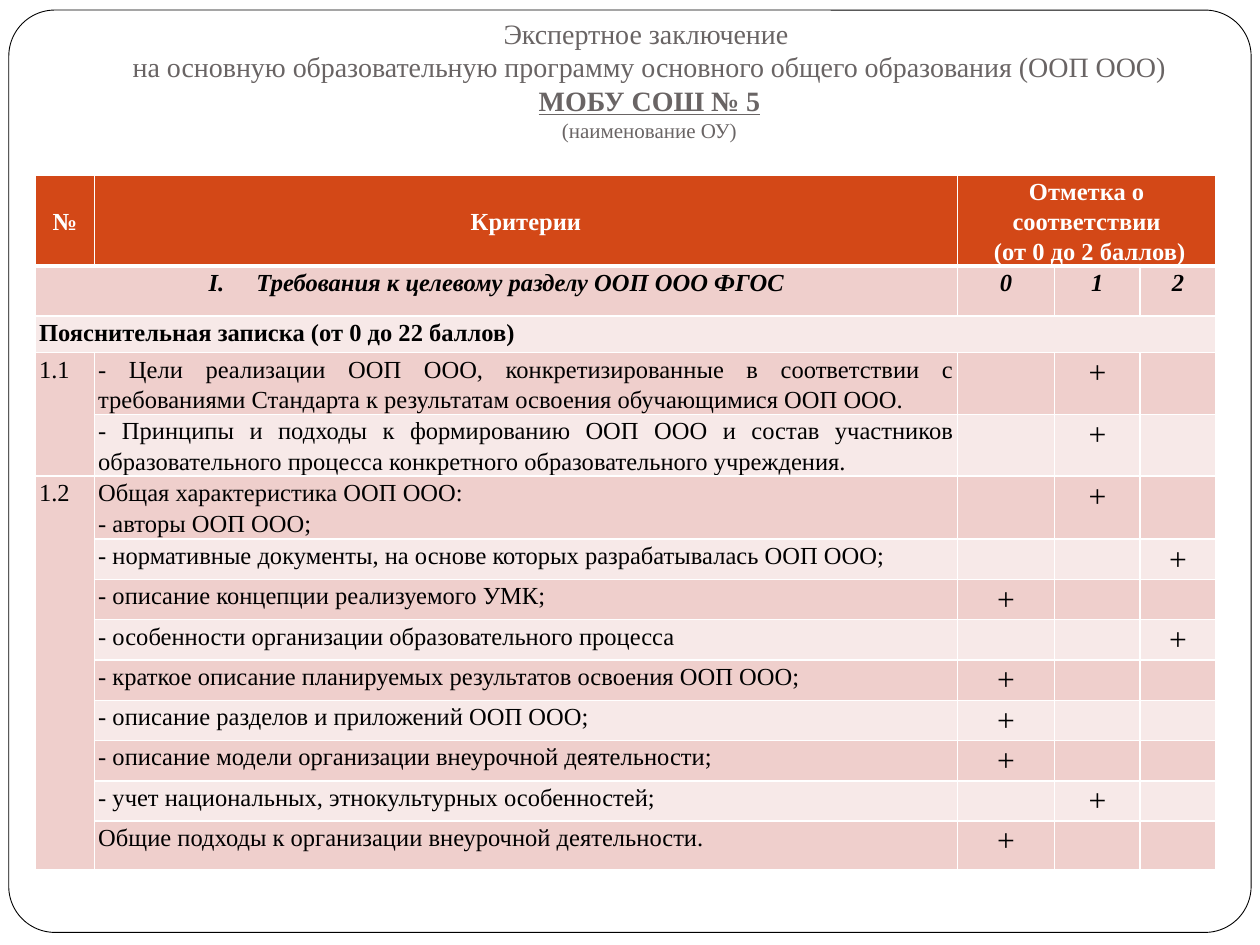
import pptx
import pptx.util
import pptx.dml.color
import pptx.enum.shapes
import pptx.enum.text
import pptx.oxml
import pptx.oxml.ns

Inches = pptx.util.Inches
Pt = pptx.util.Pt
RGBColor = pptx.dml.color.RGBColor
ALIGN = pptx.enum.text.PP_ALIGN
ANCHOR = pptx.enum.text.MSO_ANCHOR

WHITE = RGBColor(0xFF, 0xFF, 0xFF)
BLACK = RGBColor(0, 0, 0)
GRAY = RGBColor(0x69, 0x64, 0x64)
ORANGE = RGBColor(0xD3, 0x48, 0x17)
PINK = RGBColor(0xEF, 0xCF, 0xCC)
PALE = RGBColor(0xF7, 0xE9, 0xE8)

COLUMN_WIDTHS = [0.47, 6.85, 0.77, 0.68, 0.6]
ROW_HEIGHTS = [0.72, 0.4, 0.29, 0.49, 0.49, 0.5] + [0.32] * 7 + [0.39]
FIRST_CRITERION_ROW = 3
# Each criterion with the mark (0, 1 or 2) it received
CRITERIA = [
    ("- Цели реализации ООП ООО, конкретизированные в соответствии с требованиями "
     "Стандарта к результатам освоения обучающимися ООП ООО.", 1),
    ("- Принципы и подходы к формированию ООП ООО и состав участников "
     "образовательного процесса конкретного образовательного учреждения.", 1),
    ("Общая характеристика ООП ООО: \n- авторы ООП ООО;", 1),
    ("- нормативные документы, на основе которых разрабатывалась ООП ООО;", 2),
    ("- описание концепции реализуемого УМК;", 0),
    ("- особенности организации образовательного процесса", 2),
    ("- краткое описание планируемых результатов освоения ООП ООО;", 0),
    ("- описание разделов и приложений ООП ООО;", 0),
    ("- описание модели организации внеурочной деятельности;", 0),
    ("- учет национальных, этнокультурных особенностей;", 1),
    ("Общие подходы к организации внеурочной деятельности.", 0),
]


def add_text(paragraph, text, size=14, color=BLACK, bold=False, italic=False,
             underline=False):
    run = paragraph.add_run()
    run.text = text
    font = run.font
    font.name = "Times New Roman"
    font.size = Pt(size)
    font.color.rgb = color
    font.bold, font.italic, font.underline = bold, italic, underline


def set_borders(cell, bottom):
    """Give the cell white borders, 1 pt wide except for the bottom one."""
    properties = cell._tc.get_or_add_tcPr()
    widths = {"lnL": 1, "lnR": 1, "lnT": 1, "lnB": bottom}
    for position, (side, width) in enumerate(widths.items()):
        properties.insert(position, pptx.oxml.parse_xml(
            f'<a:{side} {pptx.oxml.ns.nsdecls("a")} w="{Pt(width)}"><a:solidFill>'
            f'<a:srgbClr val="{WHITE}"/></a:solidFill></a:{side}>'))


def number_roman(paragraph):
    """Number the paragraph I., II., ... with a hanging indent."""
    properties = paragraph._p.get_or_add_pPr()
    properties.set("marL", str(Inches(0.38)))
    properties.set("indent", str(Inches(-0.38)))
    properties.append(pptx.oxml.parse_xml(
        f'<a:buAutoNum {pptx.oxml.ns.nsdecls("a")} type="romanUcPeriod"/>'))


class SlideBuilder:
    def __init__(self, presentation):
        self.slide = presentation.slides.add_slide(presentation.slide_layouts[6])

    def frame(self, left, top, width, height):
        border = self.slide.shapes.add_shape(
            pptx.enum.shapes.MSO_SHAPE.ROUNDED_RECTANGLE,
            Inches(left), Inches(top), Inches(width), Inches(height))
        border.adjustments[0] = 0.05
        border.shadow.inherit = False
        border.fill.solid()
        border.fill.fore_color.rgb = WHITE
        border.line.color.rgb = BLACK
        border.line.width = Pt(0.5)

    def title(self, left, top, width, height, lines):
        box = self.slide.shapes.add_textbox(
            Inches(left), Inches(top), Inches(width), Inches(height))
        frame = box.text_frame
        frame.word_wrap = True
        frame.vertical_anchor = ANCHOR.BOTTOM
        frame.margin_bottom = Inches(0.1)
        paragraph = frame.paragraphs[0]
        paragraph.alignment = ALIGN.CENTER
        for index, (text, style) in enumerate(lines):
            if index:
                paragraph.add_line_break()
            add_text(paragraph, text, color=GRAY, **style)

    def table(self, left, top, widths, heights):
        """Add an empty table with an orange header and banded rows."""
        table = self.slide.shapes.add_table(
            len(heights), len(widths), Inches(left), Inches(top),
            Inches(sum(widths)), Inches(sum(heights))).table
        for column, width in zip(table.columns, widths):
            column.width = Inches(width)
        for index, (row, height) in enumerate(zip(table.rows, heights)):
            row.height = Inches(height)
            for cell in row.cells:
                cell.margin_left = cell.margin_right = Inches(0.03)
                cell.margin_top = cell.margin_bottom = 0
                cell.fill.solid()
                cell.fill.fore_color.rgb = (
                    ORANGE if index == 0 else PINK if index % 2 else PALE)
                set_borders(cell, bottom=1 if index else 3)
        return table

    def cell(self, cell, text, align=ALIGN.CENTER, anchor=ANCHOR.TOP,
             line_height=17.5, **style):
        cell.vertical_anchor = anchor
        for index, line in enumerate(text.split("\n")):
            frame = cell.text_frame
            paragraph = frame.add_paragraph() if index else frame.paragraphs[0]
            paragraph.alignment = align
            paragraph.line_spacing = Pt(line_height)
            add_text(paragraph, line, **style)


def fill_assessment(builder, table):
    merges = [((0, 2), (0, 4)), ((1, 0), (1, 1)), ((2, 0), (2, 4)),
              ((3, 0), (4, 0)), ((5, 0), (13, 0))]
    for first, last in merges:
        table.cell(*first).merge(table.cell(*last))

    headings = ["№", "Критерии", "Отметка о соответствии\n (от 0 до 2 баллов)"]
    for column, heading in enumerate(headings):
        builder.cell(table.cell(0, column), heading, anchor=ANCHOR.MIDDLE,
                     line_height=17.2, color=WHITE, bold=True)

    section = table.cell(1, 0)
    builder.cell(section, "Требования к целевому разделу ООП ООО ФГОС",
                 bold=True, italic=True)
    number_roman(section.text_frame.paragraphs[0])
    for mark in range(3):
        builder.cell(table.cell(1, 2 + mark), str(mark), bold=True, italic=True)

    builder.cell(table.cell(2, 0), "Пояснительная записка (от 0 до 22 баллов)",
                 align=ALIGN.LEFT, bold=True)
    for row, number in ((3, "1.1"), (5, "1.2")):
        builder.cell(table.cell(row, 0), number, align=ALIGN.LEFT)
    for row, (criterion, mark) in enumerate(CRITERIA, FIRST_CRITERION_ROW):
        builder.cell(table.cell(row, 1), criterion, align=ALIGN.JUSTIFY)
        builder.cell(table.cell(row, 2 + mark), "+", line_height=21.5, size=18)


def main():
    presentation = pptx.Presentation()
    presentation.slide_width = Inches(10)
    presentation.slide_height = Inches(7.5)
    builder = SlideBuilder(presentation)
    builder.frame(0.07, 0.08, 9.86, 7.32)
    builder.title(0.59, 0.13, 9.13, 1.1, [
        ("Экспертное заключение ", {"size": 16}),
        ("на основную образовательную программу основного общего образования "
         "(ООП ООО)", {"size": 16}),
        ("МОБУ СОШ № 5", {"size": 16, "bold": True, "underline": True}),
        ("(наименование ОУ)", {"size": 12}),
    ])
    table = builder.table(0.28, 1.39, COLUMN_WIDTHS, ROW_HEIGHTS)
    fill_assessment(builder, table)
    presentation.save("out.pptx")


if __name__ == "__main__":
    main()
